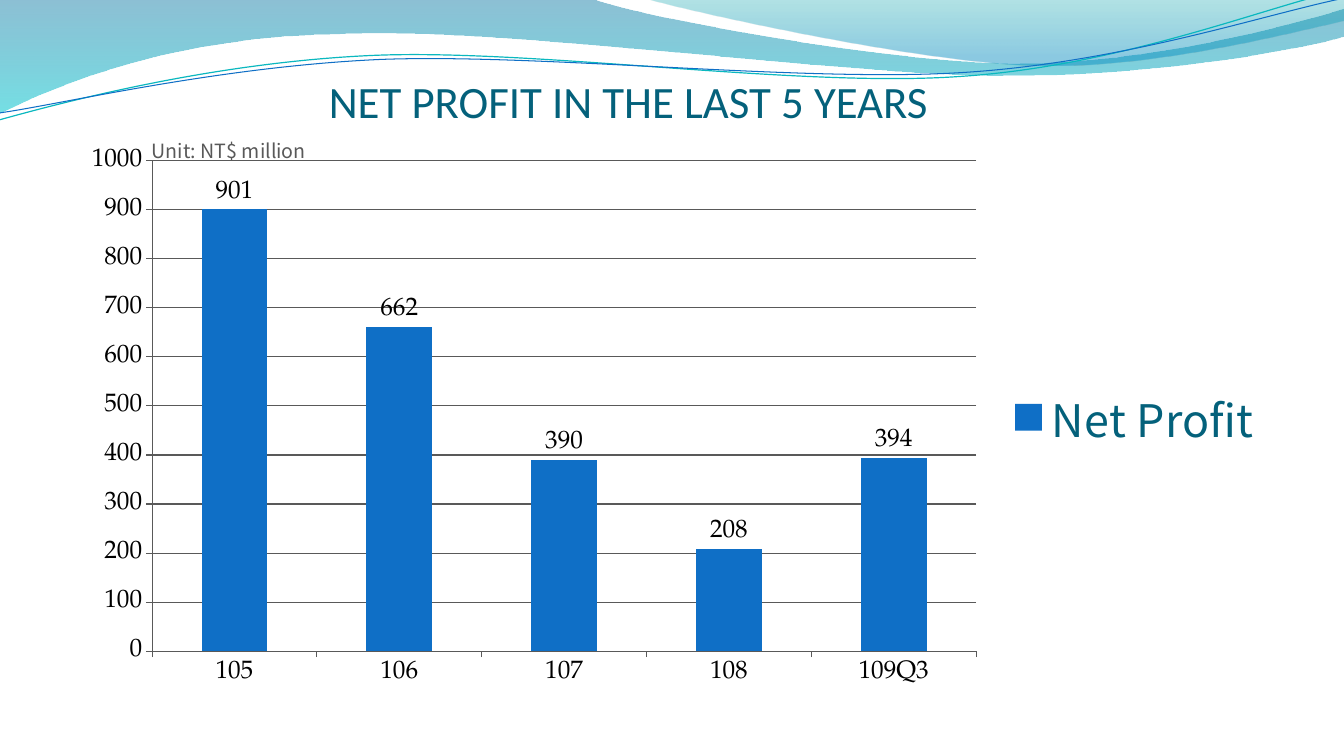
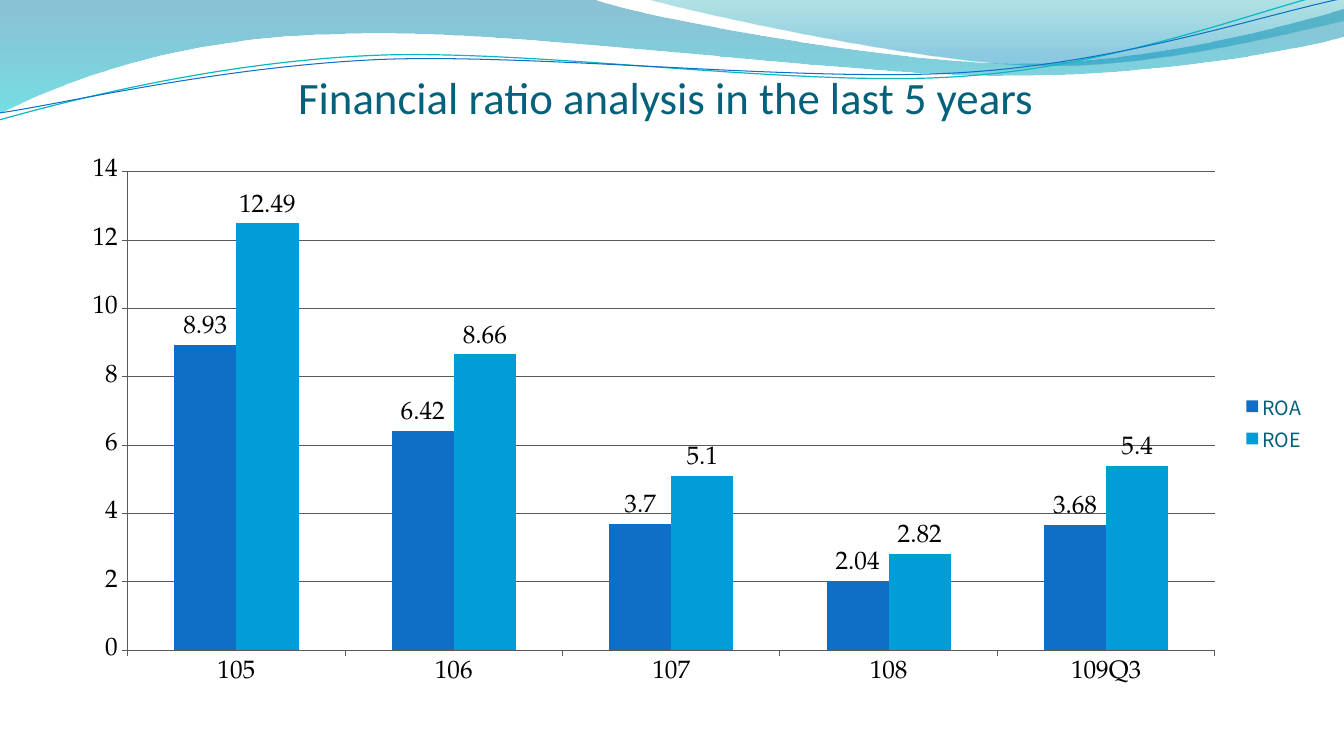
from lxml import etree
from pptx import Presentation
from pptx.chart.data import CategoryChartData
from pptx.dml.color import RGBColor
from pptx.enum.chart import XL_CHART_TYPE, XL_LABEL_POSITION, XL_LEGEND_POSITION, XL_TICK_MARK
from pptx.enum.text import MSO_ANCHOR, MSO_AUTO_SIZE, PP_ALIGN
from pptx.oxml.ns import qn
from pptx.util import Inches, Pt

COLUMNS = XL_CHART_TYPE.COLUMN_CLUSTERED
OUTSIDE_END = XL_LABEL_POSITION.OUTSIDE_END
LEGEND_RIGHT = XL_LEGEND_POSITION.RIGHT
TICK_OUT, TICK_NONE = XL_TICK_MARK.OUTSIDE, XL_TICK_MARK.NONE
BOTTOM, CENTER = MSO_ANCHOR.BOTTOM, PP_ALIGN.CENTER

TITLE_FONT, BODY_FONT, CHART_FONT = "Calibri", "Noto Sans CJK SC", "TeX Gyre Pagella"
TEAL, BLUE, SKY, GREY, BLACK = "04617B", "0F6FC6", "009DD9", "595959", "000000"
YEARS = ["105", "106", "107", "108", "109Q3"]

# Each segment holds one point for a line or three for a Bézier curve.
# Gradient stops are position, colour, opacity in percent.
BANDS = [
    ((0, 0), [
        [(5.87, -0.01)],
        [(6.34, 0.17), (8.85, 0.63), (10.11, 0.63)],
        [(11.38, 0.63), (12.78, 0.26), (13.33, 0.09)],
        [(13.35, 0.36)],
        [(13.11, 0.44), (11.6, 0.76), (9.94, 0.75)],
        [(8.29, 0.75), (5.09, 0.28), (3.43, 0.34)],
        [(1.72, 0.36), (0.61, 0.83), (-0.01, 1.13)],
    ], [(0, "0074A1", 45), (1, "00C6CF", 55)]),
    ((6.39, -0.01), [
        [(6.79, 0.11), (9.09, 0.62), (10.25, 0.65)],
        [(11.41, 0.69), (12.82, 0.32), (13.33, 0.21)],
        [(13.33, 0)],
    ], [(0, "00A1A9", 30), (0.8, "008BBF", 45)]),
]
WAVES = [
    ((-0.01, 1.19), [
        [(0.64, 1.01), (2.11, 0.62), (3.69, 0.55)],
        [(5.27, 0.48), (7.9, 0.87), (9.5, 0.76)],
        [(11.1, 0.66), (12.52, 0.08), (13.31, -0.1)],
    ], "0AB8BF", 0.85),
    ((0, 1.12), [
        [(0.63, 1.03), (2.18, 0.66), (3.78, 0.59)],
        [(5.37, 0.53), (7.96, 0.82), (9.55, 0.72)],
        [(11.15, 0.62), (12.55, 0.14), (13.34, -0.02)],
    ], BLUE, 0.75),
]
# title, title box, chart box, axis maximum, axis step, legend size, series
SLIDES = [
    ("NET PROFIT IN THE LAST 5 YEARS", (1.36, 0.69, 9.75, 0.57),
     (0.67, 1.36, 12, 5.56), 1000, 100, 32,
     [("Net Profit", BLUE, [901, 662, 390, 208, 394])]),
    ("Financial ratio analysis in the last 5 years", (1.73, 0.62, 9.75, 0.61),
     (0.67, 1.47, 12.39, 5.44), 14, 2, 14,
     [("ROA", BLUE, [8.93, 6.42, 3.7, 2.04, 3.68]),
      ("ROE", SKY, [12.49, 8.66, 5.1, 2.82, 5.4])]),
]


def style(font, name, size, color):
    font.name, font.size = name, Pt(size)
    font.color.rgb = RGBColor.from_string(color)


def add_curve(shapes, start, segments, close):
    """Draw a freeform, turning each three-point segment into a Bézier curve."""
    builder = shapes.build_freeform(Inches(start[0]), Inches(start[1]))
    points = [(Inches(x), Inches(y)) for seg in segments for x, y in seg]
    builder.add_line_segments(points, close=close)
    sp = builder.convert_to_shape()
    sp.shadow.inherit = False
    outline = next(sp.element.iter(qn("a:path")))
    lines = iter(outline.findall(qn("a:lnTo")))
    for seg in segments:
        parts = [next(lines) for _ in seg]
        if len(parts) == 3:
            curve = etree.SubElement(outline, qn("a:cubicBezTo"))
            parts[0].addprevious(curve)
            for part in parts:
                curve.append(part[0])
                outline.remove(part)
    return sp


prs = Presentation()
prs.slide_width, prs.slide_height = Inches(13.33), Inches(7.5)
layout = prs.slide_layouts[5]
slides = [prs.slides.add_slide(layout) for _ in SLIDES]

# The waves are drawn on a slide, then moved behind everything on the layout
waves = []
for start, segments, stops in BANDS:
    sp = add_curve(slides[0].shapes, start, segments, True)
    sp.line.fill.background()
    sp.fill.gradient()
    sp.fill.gradient_angle = 270
    for stop, (position, color, _) in zip(sp.fill.gradient_stops, stops):
        stop.position = position
        stop.color.rgb = RGBColor.from_string(color)
    for clr, (_, _, opacity) in zip(sp.element.iter(qn("a:srgbClr")), stops):
        etree.SubElement(clr, qn("a:alpha")).set("val", str(opacity * 1000))
    waves.append(sp)
for start, segments, color, width in WAVES:
    sp = add_curve(slides[0].shapes, start, segments, False)
    sp.fill.background()
    sp.line.color.rgb = RGBColor.from_string(color)
    sp.line.width = Pt(width)
    waves.append(sp)
for i, sp in enumerate(waves):
    sp.name = f"Wave {i + 1}"
    next(sp.element.iter(qn("p:cNvPr"))).set("id", str(100 + i))
    layout.shapes.element.insert(2 + i, sp.element)

for s, (title, title_box, chart_box, top, step, legend_size, series) in zip(slides, SLIDES):
    sp = s.shapes.title
    sp.left, sp.top, sp.width, sp.height = map(Inches, title_box)
    tf = sp.text_frame
    tf.auto_size = MSO_AUTO_SIZE.NONE
    tf.vertical_anchor = BOTTOM
    tf.margin_left = tf.margin_right = tf.margin_bottom = 0
    tf.margin_top = Inches(0.05)
    p = tf.paragraphs[0]
    p.alignment = CENTER
    r = p.add_run()
    r.text = title
    style(r.font, TITLE_FONT, 32, TEAL)

    data = CategoryChartData()
    data.categories = YEARS
    for name, _, values in series:
        data.add_series(name, values)
    chart = s.shapes.add_chart(COLUMNS, *map(Inches, chart_box), data).chart
    style(chart.font, CHART_FONT, 18, BLACK)
    chart.has_title = False
    chart.has_legend = True
    chart.legend.position = LEGEND_RIGHT
    chart.legend.include_in_layout = False
    style(chart.legend.font, BODY_FONT, legend_size, TEAL)

    plot = chart.plots[0]
    plot.gap_width, plot.overlap = 150, 0
    plot.vary_by_categories = False
    for ser, (_, color, _) in zip(plot.series, series):
        ser.format.fill.solid()
        ser.format.fill.fore_color.rgb = RGBColor.from_string(color)
        ser.data_labels.show_value = True
        ser.data_labels.position = OUTSIDE_END

    axis = chart.value_axis
    axis.minimum_scale, axis.maximum_scale, axis.major_unit = 0, top, step
    axis.has_major_gridlines = True
    for ax in (axis, chart.category_axis):
        ax.major_tick_mark, ax.minor_tick_mark = TICK_OUT, TICK_NONE
    for part in (axis, axis.major_gridlines, chart.category_axis):
        part.format.line.color.rgb = RGBColor.from_string(GREY)
        part.format.line.width = Pt(0.75)

unit = slides[0].shapes.add_textbox(Inches(1.3), Inches(1.33), Inches(1.94), Inches(0.27))
tf = unit.text_frame
tf.word_wrap = True
p = tf.paragraphs[0]
p.alignment = CENTER
r = p.add_run()
r.text = "Unit: NT$ million"
style(r.font, BODY_FONT, 14, GREY)

prs.save("out.pptx")
